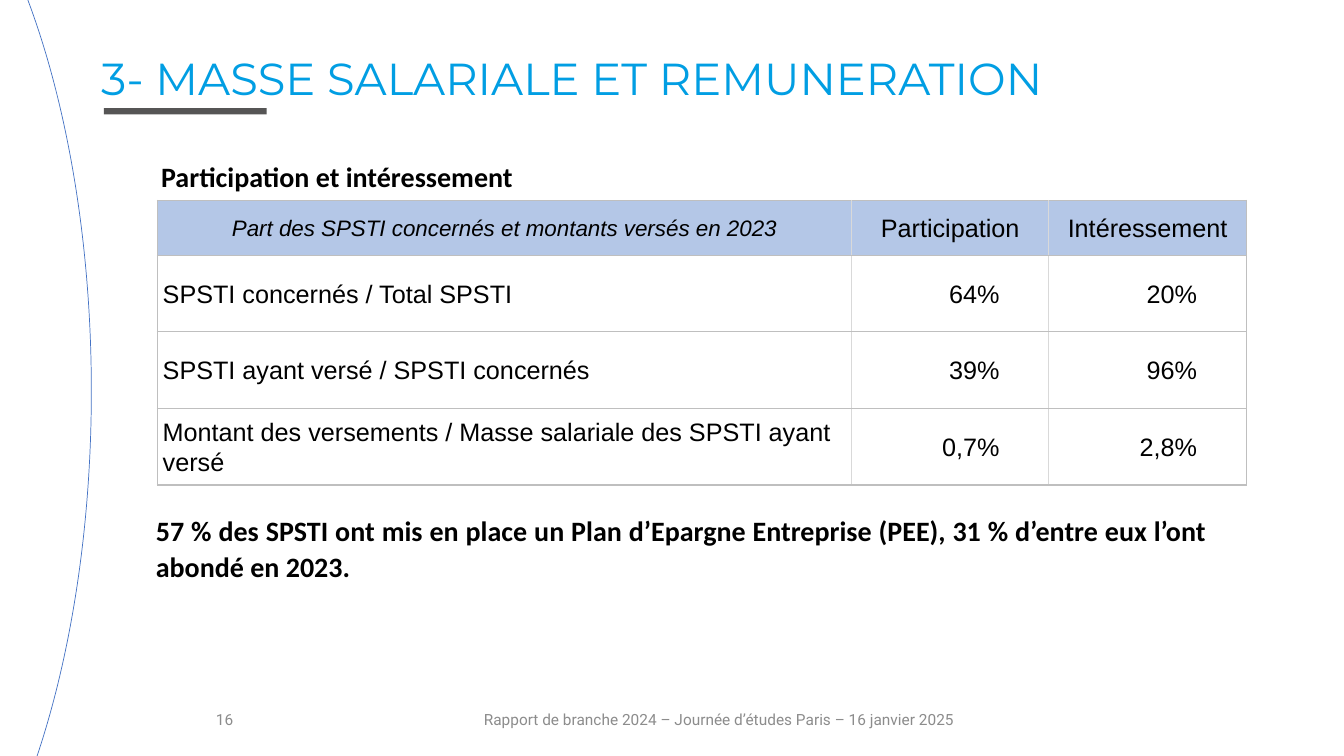
from pptx import Presentation
from pptx.dml.color import RGBColor
from pptx.enum.shapes import MSO_SHAPE
from pptx.enum.text import MSO_ANCHOR, PP_ALIGN
from pptx.oxml import parse_xml
from pptx.oxml.ns import nsdecls
from pptx.util import Pt

PX = 9525
LEFT, MID, RIGHT, FULL = PP_ALIGN.LEFT, PP_ALIGN.CENTER, PP_ALIGN.RIGHT, PP_ALIGN.JUSTIFY


def color(code):
    return RGBColor.from_string(code)


def style(frame, text, size, font, tint, align, bold=False, space=1.0, after=0):
    frame.text = text
    frame.word_wrap = True
    para = frame.paragraphs[0]
    para.alignment = align
    para.line_spacing = space
    para.space_after = Pt(after)
    run = para.runs[0]
    run.font.size = Pt(size)
    run.font.name = font
    run.font.bold = bold
    run.font.color.rgb = color(tint)
    return run


deck = Presentation()
deck.slide_width = 1280 * PX
deck.slide_height = 720 * PX
slide = deck.slides.add_slide(deck.slide_layouts[6])
shapes = slide.shapes

bar = shapes.add_shape(MSO_SHAPE.RECTANGLE, 99 * PX, 103 * PX, 155 * PX, 6 * PX)
bar.shadow.inherit = False
bar.fill.solid()
bar.fill.fore_color.rgb = color("565555")
bar.line.fill.background()

arc = shapes.add_shape(MSO_SHAPE.ARC, -424 * PX, -204 * PX, 511 * PX, 1153 * PX)
arc.shadow.inherit = False
arc.adjustments[0] = 178.34
arc.adjustments[1] = 35.86
arc.fill.background()
arc.line.color.rgb = color("4472C4")
arc.line.width = Pt(0.5)

texts = [
    (70, 666, 288, 38, "16", 11, "Roboto", "8C8C8C", MID, False, 1.0, 0, MSO_ANCHOR.MIDDLE),
    (414, 666, 542, 38, "Rapport de branche 2024 – Journée d’études Paris – 16 janvier 2025",
     11, "Roboto", "8C8C8C", MID, False, 1.0, 0, MSO_ANCHOR.MIDDLE),
    (87, 49, 1125, 58, "3- MASSE SALARIALE ET REMUNERATION",
     32, "Montserrat", "019EE3", LEFT, False, 0.9, 0, MSO_ANCHOR.TOP),
    (144, 147, 1049, 63, "Participation et intéressement",
     20, "Calibri", "000000", LEFT, True, 1.0, 0, MSO_ANCHOR.TOP),
    (139, 482, 1020, 78,
     "57 % des SPSTI ont mis en place un Plan d’Epargne Entreprise (PEE), "
     "31 % d’entre eux l’ont abondé en 2023.",
     20, "Calibri", "000000", FULL, True, 1.07, 8, MSO_ANCHOR.TOP),
]
for left, top, width, height, *look, anchor in texts:
    box = shapes.add_textbox(left * PX, top * PX, width * PX, height * PX)
    box.text_frame.vertical_anchor = anchor
    style(box.text_frame, *look)

rows = [
    ("Part des SPSTI concernés et montants versés en 2023", "Participation", "Intéressement"),
    ("SPSTI concernés / Total SPSTI", "64%", "20%"),
    ("SPSTI ayant versé / SPSTI concernés", "39%", "96%"),
    ("Montant des versements / Masse salariale des SPSTI ayant versé", "0,7%", "2,8%"),
]
widths = [661, 188, 188]
heights = [52, 73, 73, 73]
table = shapes.add_table(4, 3, 150 * PX, 191 * PX, sum(widths) * PX, sum(heights) * PX).table
table.first_row = False
table.horz_banding = False
for col, width in zip(table.columns, widths):
    col.width = width * PX
for row, height in zip(table.rows, heights):
    row.height = height * PX

for r, row in enumerate(rows):
    for c, text in enumerate(row):
        cell = table.cell(r, c)
        head, label = r == 0, c == 0
        cell.vertical_anchor = MSO_ANCHOR.MIDDLE
        cell.margin_left = 5 * PX
        cell.margin_right = (5 if head or label else 47) * PX
        cell.margin_top = cell.margin_bottom = 0
        align = MID if head else LEFT if label else RIGHT
        size = 16 if head and label else 18
        run = style(cell.text_frame, text, size, "Arial", "000000", align, space=1.07, after=8)
        run.font.italic = head and label
        edges = {"L": "BFBFBF" if label else "D9D9D9", "R": "BFBFBF" if c == 2 else "D9D9D9",
                 "T": "BFBFBF", "B": "BFBFBF"}
        props = cell._tc.get_or_add_tcPr()
        for side, tint in edges.items():
            props.append(parse_xml(
                f'<a:ln{side} {nsdecls("a")} w="12700"><a:solidFill>'
                f'<a:srgbClr val="{tint}"/></a:solidFill></a:ln{side}>'))
        if head:
            cell.fill.solid()
            cell.fill.fore_color.rgb = color("B4C7E7")
        else:
            cell.fill.background()

deck.save("out.pptx")
